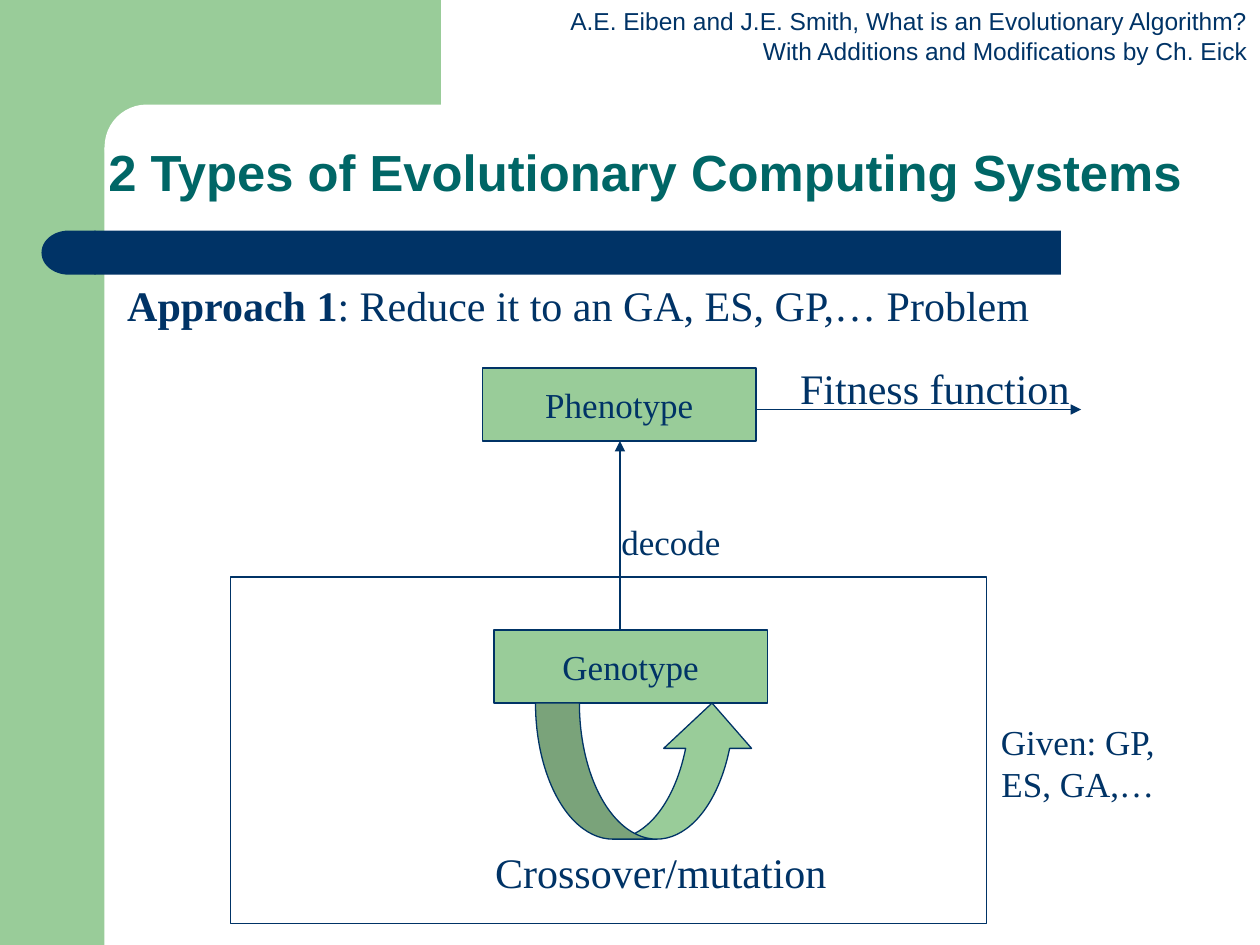
import pptx
import pptx.util
import pptx.dml.color
import pptx.enum.shapes
import pptx.enum.text
import pptx.oxml.ns
import lxml.etree

Inches, Pt = pptx.util.Inches, pptx.util.Pt
Kind = pptx.enum.shapes.MSO_SHAPE
Align = pptx.enum.text.PP_ALIGN
Anchor = pptx.enum.text.MSO_ANCHOR
Fit = pptx.enum.text.MSO_AUTO_SIZE
qn = pptx.oxml.ns.qn

hues = {"green": "99CC99", "navy": "003366", "teal": "006666", "white": "FFFFFF"}
rgb = {name: pptx.dml.color.RGBColor.from_string(code) for name, code in hues.items()}
serif, sans = "Times New Roman", "Arial"

deck = pptx.Presentation()
deck.slide_width, deck.slide_height = Inches(10), Inches(7.5)
slide = deck.slides.add_slide(deck.slide_layouts[5])
shapes = slide.shapes


def draw(kind, box, fill=None, line=None, adjust=()):
    """Add a preset shape; box is left, top, width, height in inches."""
    shape = shapes.add_shape(kind, *map(Inches, box))
    shape.shadow.inherit = False
    if fill:
        shape.fill.solid()
        shape.fill.fore_color.rgb = rgb[fill]
    else:
        shape.fill.background()
    if line:
        shape.line.color.rgb = rgb[line]
        shape.line.width = Pt(0.75)
    else:
        shape.line.fill.background()
    for index, value in enumerate(adjust):
        shape.adjustments[index] = value
    return shape


def write(shape, lines, size, font=serif, color="navy", align=Align.CENTER, wrap=False):
    """Fill a shape with one paragraph per line."""
    frame = shape.text_frame
    frame.word_wrap = wrap
    frame.text = "\n".join(lines)
    for para in frame.paragraphs:
        para.alignment = align
        para.font.size = Pt(size)
        para.font.name = font
        para.font.color.rgb = rgb[color]
    return frame


# Backdrop: green corner, rounded white panel, navy bar
draw(Kind.RECTANGLE, (0, 0, 0.83, 7.5), "green")
draw(Kind.RECTANGLE, (0.75, 0, 2.75, 1.17), "green")
draw(Kind.ROUNDED_RECTANGLE, (0.83, 0.83, 5.58, 0.67), "white", adjust=[0.5])
draw(Kind.ROUNDED_RECTANGLE, (0.75, 1.83, 7.67, 0.35), "navy", adjust=[0])
cap = draw(Kind.FLOWCHART_DELAY, (0.33, 1.83, 0.43, 0.35), "navy")
cap._element.spPr.find(qn("a:xfrm")).set("flipH", "1")

# Credit line
credit = shapes.add_textbox(Inches(4.25), 0, Inches(5.75), Inches(0.57))
write(credit, ["A.E. Eiben and J.E. Smith, What is an Evolutionary Algorithm?",
               "With Additions and Modifications by Ch. Eick"],
      14, sans, align=Align.RIGHT, wrap=True)

# Title, brought in front of the backdrop
title = shapes.title
title.left, title.top, title.width, title.height = map(Inches, (0.25, 1.08, 9.75, 0.58))
frame = write(title, ["2 Types of Evolutionary Computing Systems"], 29, sans, "teal", wrap=True)
frame.auto_size = Fit.NONE
frame.vertical_anchor = Anchor.BOTTOM
frame.paragraphs[0].font.bold = True
frame.paragraphs[0].line_spacing = 0.9
title._element.getparent().append(title._element)

# Frame and the two boxes
draw(Kind.RECTANGLE, (1.83, 4.58, 6, 2.75), line="navy")
for name, left, top in (("Phenotype", 3.83, 2.92), ("Genotype", 3.92, 5)):
    box = draw(Kind.RECTANGLE, (left, top, 2.17, 0.58), "green", "navy")
    write(box, [name], 20).vertical_anchor = Anchor.MIDDLE

# Arrows
draw(Kind.CURVED_UP_ARROW, (4.25, 5.58, 1.75, 1.08), "green", "navy", [0.323, 0.646, 0.333])
for ends in ((6, 3.25, 8.58, 3.25), (4.92, 5, 4.92, 3.5)):
    arrow = shapes.add_connector(pptx.enum.shapes.MSO_CONNECTOR.STRAIGHT, *map(Inches, ends))
    arrow.line.color.rgb = rgb["navy"]
    arrow.line.width = Pt(0.75)
    lxml.etree.SubElement(arrow.line._get_or_add_ln(), qn("a:tailEnd"), type="triangle")
    lxml.etree.SubElement(arrow._element.spPr, qn("a:effectLst"))

# Labels
labels = [
    (["Fitness function"], 24, (6.25, 2.83, 2.34, 0.5)),
    (["decode"], 20, (4.83, 4.08, 0.99, 0.43)),
    (["Crossover/mutation"], 24, (3.83, 6.67, 2.83, 0.5)),
    (["Given: GP,", "ES, GA,…"], 20, (7.83, 5.67, 1.45, 0.77)),
    (["Approach 1"], 24, (0.89, 2.17, 7.4, 0.5)),
]
for lines, size, place in labels:
    label = shapes.add_textbox(*map(Inches, place))
    frame = write(label, lines, size)

# The last label, the lead line, goes on after its bold start
lead = frame.paragraphs[0]
lead.runs[0].font.bold = True
lead.add_run().text = ": Reduce it to an GA, ES, GP,… Problem"

deck.save("out.pptx")
